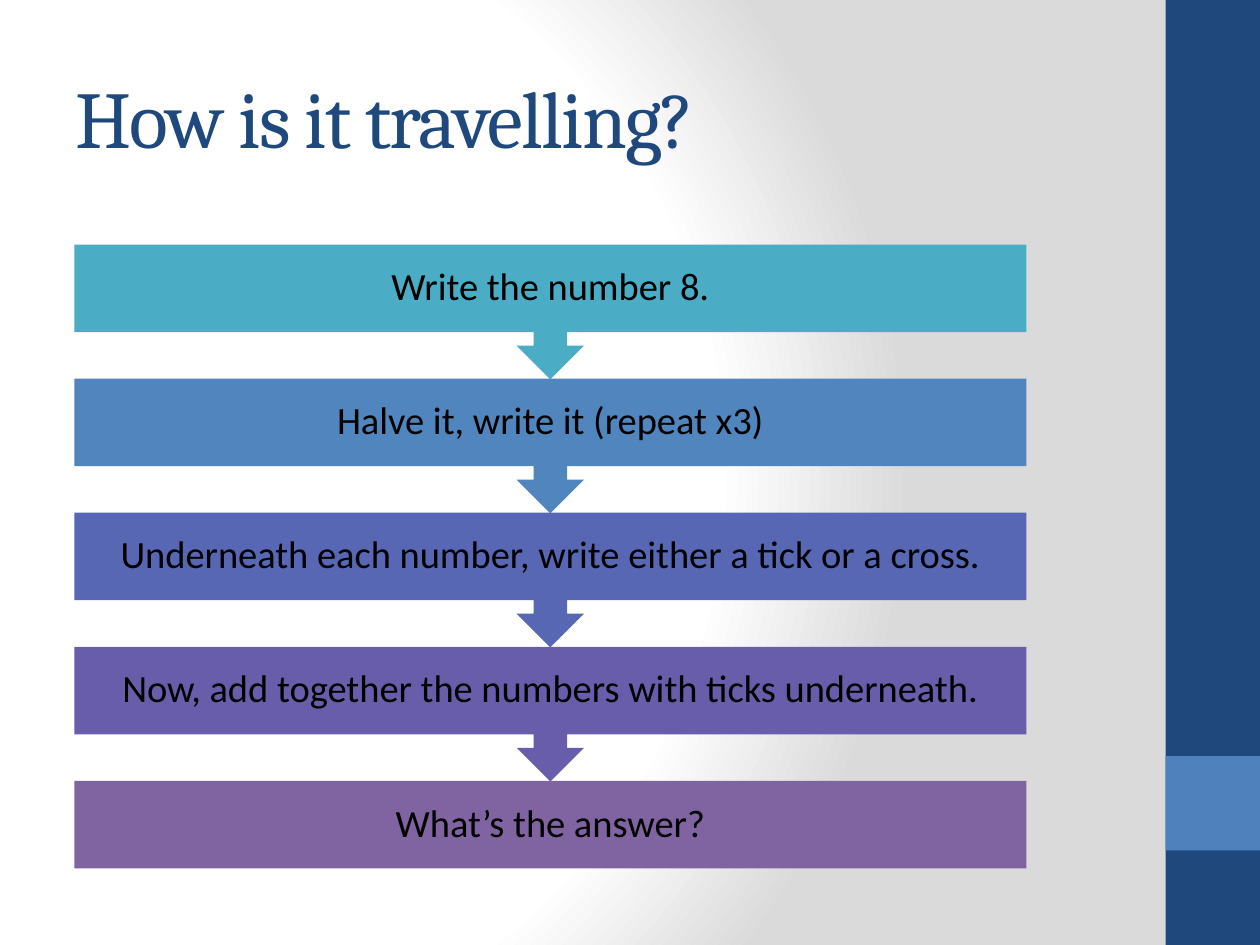
from dataclasses import dataclass

import pptx
import pptx.dml.color
import pptx.enum.shapes
import pptx.enum.text
import pptx.oxml
import pptx.oxml.ns
import pptx.util
from pptx.util import Pt

SHAPES = pptx.enum.shapes.MSO_SHAPE
ALIGN = pptx.enum.text.PP_ALIGN
ANCHOR = pptx.enum.text.MSO_ANCHOR


@dataclass(frozen=True)
class Theme:
    navy: str = "1F497D"
    blue: str = "4F81BD"
    text: str = "000000"
    background_inner: str = "FFFFFF"
    background_outer: str = "DADADA"
    title_font: str = "Cambria"
    body_font: str = "Calibri"
    title_size: float = 46
    body_size: float = 22


THEME = Theme()

STEPS = [
    ("Write the number 8.", "4BACC6"),
    ("Halve it, write it (repeat x3)", "5185BD"),
    ("Underneath each number, write either a tick or a cross.", "5767B4"),
    ("Now, add together the numbers with ticks underneath.", "685DAB"),
    ("What’s the answer?", "8064A2"),
]
STEP_LEFT, STEP_TOP, STEP_WIDTH = 42.5, 139.8, 544
STEP_PITCH, CALLOUT_HEIGHT, BOX_HEIGHT = 76.6, 77, 50


def rgb(color):
    return pptx.dml.color.RGBColor.from_string(color)


def style_font(paragraph, name, size, color):
    paragraph.font.name = name
    paragraph.font.size = Pt(size)
    paragraph.font.color.rgb = rgb(color)


def set_background(slide):
    """Fill the background with a circular gradient centred left of the middle."""
    fill = slide.background.fill
    fill.solid()
    properties = slide.background._cSld.bg.bgPr
    stops = [
        (0, THEME.background_inner),
        (75, THEME.background_inner),
        (100, THEME.background_outer),
    ]
    stop_xml = "".join(
        f'<a:gs pos="{position * 1000}"><a:srgbClr val="{color}"/></a:gs>'
        for position, color in stops
    )
    gradient = pptx.oxml.parse_xml(
        f'<a:gradFill {pptx.oxml.ns.nsdecls("a")} rotWithShape="1">'
        f"<a:gsLst>{stop_xml}</a:gsLst>"
        '<a:path path="circle">'
        '<a:fillToRect l="20000" t="50000" r="100000" b="50000"/>'
        "</a:path></a:gradFill>"
    )
    properties.replace(properties[0], gradient)


def add_block(slide, kind, left, top, width, height, color):
    shape = slide.shapes.add_shape(kind, Pt(left), Pt(top), Pt(width), Pt(height))
    shape.shadow.inherit = False
    shape.fill.solid()
    shape.fill.fore_color.rgb = rgb(color)
    shape.line.fill.background()
    return shape


def add_step(slide, index, text, color, is_last):
    """Add one step; every step but the last points down to the next."""
    kind = SHAPES.RECTANGLE if is_last else SHAPES.DOWN_ARROW_CALLOUT
    height = BOX_HEIGHT if is_last else CALLOUT_HEIGHT
    top = STEP_TOP + index * STEP_PITCH
    step = add_block(slide, kind, STEP_LEFT, top, STEP_WIDTH, height, color)
    frame = step.text_frame
    frame.word_wrap = True
    frame.vertical_anchor = ANCHOR.MIDDLE
    frame.margin_left = frame.margin_right = Pt(12)
    frame.margin_top = frame.margin_bottom = Pt(12)
    paragraph = frame.paragraphs[0]
    paragraph.text = text
    paragraph.alignment = ALIGN.CENTER
    paragraph.line_spacing = 0.9
    style_font(paragraph, THEME.body_font, THEME.body_size, THEME.text)


def set_title(slide, text):
    title = slide.shapes.title
    title.left, title.top = Pt(36), Pt(21.6)
    title.width, title.height = Pt(600), Pt(90)
    title.text_frame.vertical_anchor = ANCHOR.MIDDLE
    paragraph = title.text_frame.paragraphs[0]
    paragraph.text = text
    paragraph.alignment = ALIGN.LEFT
    style_font(paragraph, THEME.title_font, THEME.title_size, THEME.navy)
    paragraph.runs[0].font._element.set("spc", "-100")


def main():
    presentation = pptx.Presentation()
    presentation.slide_width, presentation.slide_height = Pt(720), Pt(540)
    slide = presentation.slides.add_slide(presentation.slide_layouts[5])
    set_background(slide)
    add_block(slide, SHAPES.RECTANGLE, 666, 0, 54, 540, THEME.navy)
    add_block(slide, SHAPES.RECTANGLE, 666, 432, 54, 54, THEME.blue)
    set_title(slide, "How is it travelling?")
    for index, (text, color) in enumerate(STEPS):
        add_step(slide, index, text, color, index == len(STEPS) - 1)
    presentation.save("out.pptx")


if __name__ == "__main__":
    main()
